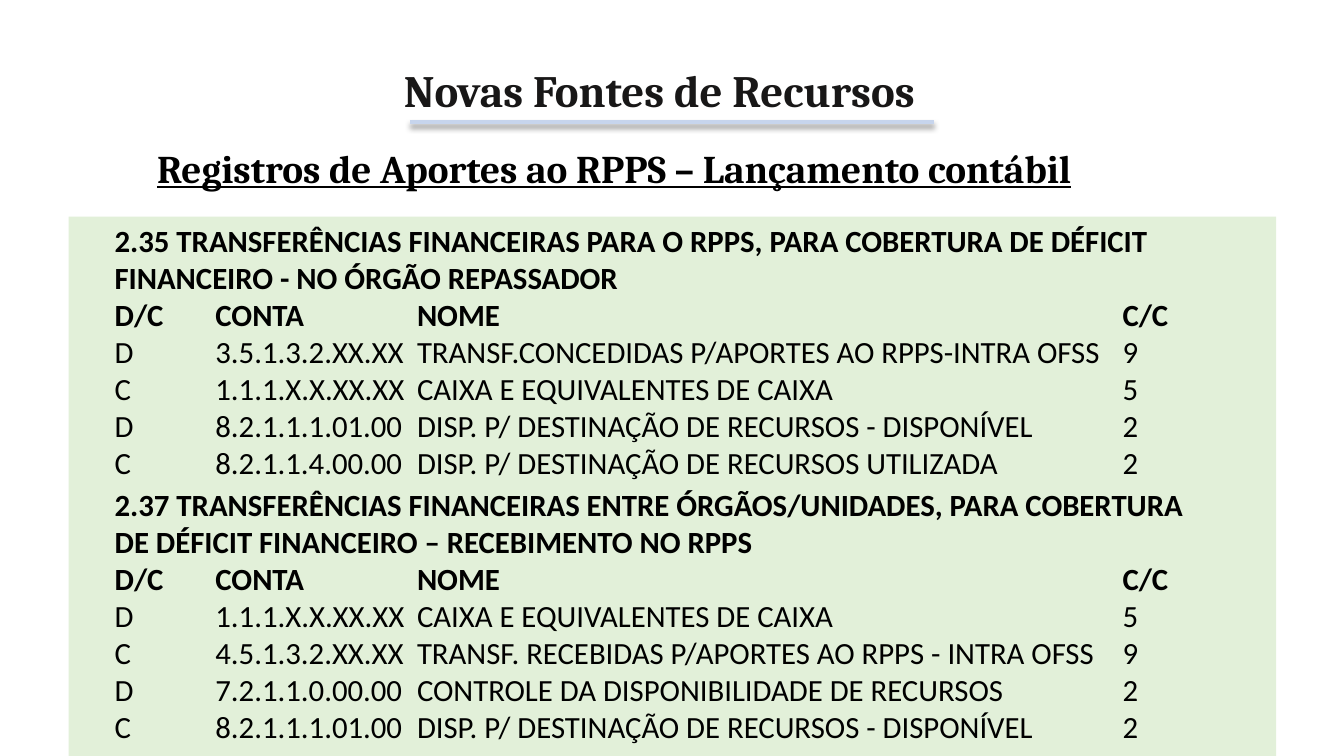
from lxml.etree import SubElement
from pptx import Presentation
from pptx.dml.color import RGBColor
from pptx.enum.shapes import MSO_CONNECTOR, MSO_SHAPE
from pptx.enum.text import MSO_AUTO_SIZE
from pptx.oxml.ns import qn
from pptx.util import Cm, Pt

COLORS = {"title": "181717", "text": "000000", "rule": "C7D5ED",
          "panel": "E2F0D9", "shadow": "000000"}
TAB_STOPS = (2.54, 7.62, 25.4)
HEADER = ("D/C", "CONTA", "NOME", "C/C")

TRANSFER_HEADING = ("2.35 TRANSFERÊNCIAS FINANCEIRAS PARA O RPPS, PARA COBERTURA "
                    "DE DÉFICIT FINANCEIRO - NO ÓRGÃO REPASSADOR")
TRANSFER_ENTRIES = [
    ("D", "3.5.1.3.2.XX.XX", "TRANSF.CONCEDIDAS P/APORTES AO RPPS-INTRA OFSS", "9"),
    ("C", "1.1.1.X.X.XX.XX", "CAIXA E EQUIVALENTES DE CAIXA", "5"),
    ("D", "8.2.1.1.1.01.00", "DISP. P/ DESTINAÇÃO DE RECURSOS - DISPONÍVEL", "2"),
    ("C", "8.2.1.1.4.00.00", "DISP. P/ DESTINAÇÃO DE RECURSOS UTILIZADA", "2"),
]
RECEIPT_HEADING = ("2.37 TRANSFERÊNCIAS FINANCEIRAS ENTRE ÓRGÃOS/UNIDADES, PARA COBERTURA "
                   "DE DÉFICIT FINANCEIRO – RECEBIMENTO NO RPPS")
RECEIPT_ENTRIES = [
    ("D", "1.1.1.X.X.XX.XX", "CAIXA E EQUIVALENTES DE CAIXA", "5"),
    ("C", "4.5.1.3.2.XX.XX", "TRANSF. RECEBIDAS P/APORTES AO RPPS - INTRA OFSS", "9"),
    ("D", "7.2.1.1.0.00.00", "CONTROLE DA DISPONIBILIDADE DE RECURSOS", "2"),
    ("C", "8.2.1.1.1.01.00", "DISP. P/ DESTINAÇÃO DE RECURSOS - DISPONÍVEL", "2"),
]


def write(paragraph, text, font="Calibri", size=22, color="text", bold=False, underline=False):
    run = paragraph.add_run()
    run.text = text
    run.font.name = font
    run.font.size = Pt(size)
    run.font.bold = bold
    run.font.underline = underline
    run.font.color.rgb = RGBColor.from_string(COLORS[color])


def add_text_frame(slide, left, top, width, height):
    text_frame = slide.shapes.add_textbox(Cm(left), Cm(top), Cm(width), Cm(height)).text_frame
    text_frame.word_wrap = True
    text_frame.auto_size = MSO_AUTO_SIZE.SHAPE_TO_FIT_TEXT
    return text_frame


def set_tab_stops(paragraph):
    tab_list = SubElement(paragraph._p.get_or_add_pPr(), qn("a:tabLst"))
    for position in TAB_STOPS:
        SubElement(tab_list, qn("a:tab"), pos=str(int(Cm(position))), algn="l")


def add_soft_shadow(connector):
    effects = SubElement(connector._element.spPr, qn("a:effectLst"))
    shadow = SubElement(effects, qn("a:outerShdw"), blurRad=str(int(Pt(4))),
                        dist=str(int(Pt(3))), dir="5400000", rotWithShape="0")
    color = SubElement(shadow, qn("a:srgbClr"), val=COLORS["shadow"])
    SubElement(color, qn("a:alpha"), val="40000")


def add_title(slide, left, top, width, height):
    text_frame = add_text_frame(slide, left, top, width, height)
    write(text_frame.paragraphs[0], "Novas Fontes de Recursos",
          font="Cambria", size=32, color="title", bold=True)
    # Rule under the title
    rule_left, rule_top = Cm(left + 0.4), Cm(top + height)
    rule = slide.shapes.add_connector(MSO_CONNECTOR.STRAIGHT, rule_left, rule_top,
                                      rule_left + Cm(13.2), rule_top)
    rule.line.color.rgb = RGBColor.from_string(COLORS["rule"])
    rule.line.width = Pt(3)
    add_soft_shadow(rule)


def add_subtitle(slide, left, top, width, height):
    text_frame = add_text_frame(slide, left, top, width, height)
    write(text_frame.paragraphs[0], "Registros de Aportes ao RPPS – Lançamento contábil",
          font="Cambria", size=28, bold=True, underline=True)


def add_entries(slide, left, top, width, height, heading, entries):
    text_frame = add_text_frame(slide, left, top, width, height)
    write(text_frame.paragraphs[0], heading, bold=True)
    for row in [HEADER, *entries]:
        paragraph = text_frame.add_paragraph()
        set_tab_stops(paragraph)
        write(paragraph, "\t".join(row), bold=row is HEADER)


def add_ledger(slide, left, top, width, height):
    panel = slide.shapes.add_shape(MSO_SHAPE.RECTANGLE, Cm(left), Cm(top), Cm(width), Cm(height))
    panel.shadow.inherit = False
    panel.fill.solid()
    panel.fill.fore_color.rgb = RGBColor.from_string(COLORS["panel"])
    panel.line.fill.background()
    # Entries of the paying body, then of the receiving fund
    text_left = left + 0.91
    add_entries(slide, text_left, top, 28.6, 6.83, TRANSFER_HEADING, TRANSFER_ENTRIES)
    add_entries(slide, text_left, top + 6.66, 27.51, 6.83, RECEIPT_HEADING, RECEIPT_ENTRIES)


def main():
    presentation = Presentation()
    presentation.slide_width, presentation.slide_height = Cm(33.87), Cm(19.05)
    slide = presentation.slides.add_slide(presentation.slide_layouts[6])
    add_title(slide, 9.93, 1.45, 14.02, 1.62)
    add_subtitle(slide, 3.71, 3.5, 24.61, 1.45)
    add_ledger(slide, 1.73, 5.46, 30.43, 13.59)
    presentation.save("out.pptx")


if __name__ == "__main__":
    main()
